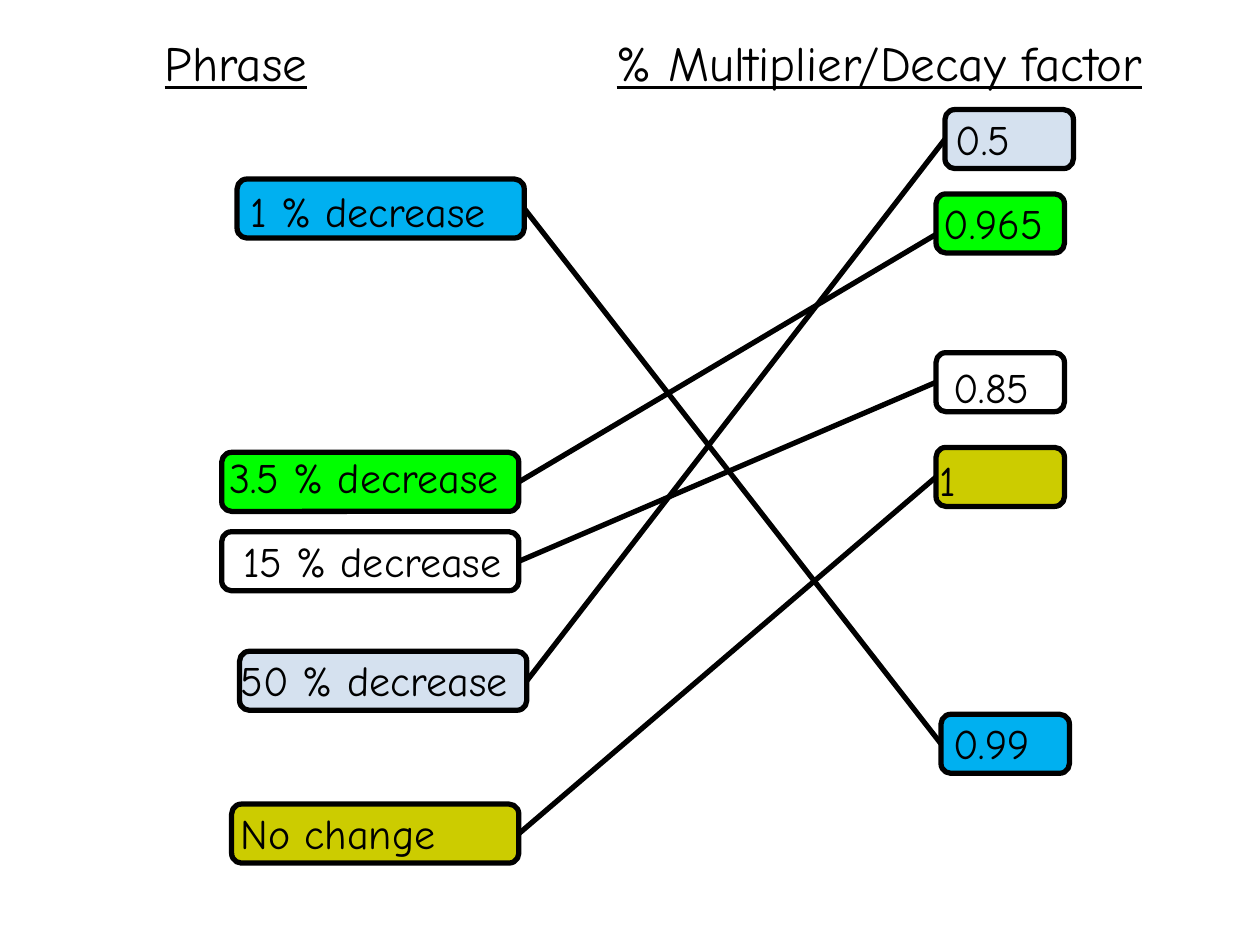
"""Build a matching exercise that links percentage decreases to their multipliers."""
from lxml.etree import SubElement
from pptx import Presentation
from pptx.dml.color import RGBColor
from pptx.enum.shapes import MSO_CONNECTOR, MSO_SHAPE
from pptx.enum.text import MSO_AUTO_SIZE
from pptx.oxml.ns import qn
from pptx.util import Cm, Pt

BLACK = RGBColor(0x00, 0x00, 0x00)
BLUE = RGBColor(0x00, 0xB0, 0xF0)
GREEN = RGBColor(0x00, 0xFF, 0x00)
PALE = RGBColor(0xD5, 0xE1, 0xEF)
OLIVE = RGBColor(0xCC, 0xCC, 0x00)

FONT = "Comic Neue"
BOX_HEIGHT = 1.19
FACTOR_WIDTH = 2.59
PHRASE_LABEL_WIDTH, FACTOR_LABEL_WIDTH, LABEL_HEIGHT = 7.01, 6.35, 1.3
FACTOR_COLUMN_TAB = 9.11

HEADINGS = ("Phrase", "\t", "% Multiplier/Decay factor")

# phrase and factor: text, (box left, top, width), (label left, top); then line drop
PAIRS = [
    (BLUE, ("1 % decrease", (4.78, 3.61, 5.79), (4.8, 3.61)),
     ("0.99", (18.97, 14.4, FACTOR_WIDTH), (18.97, 14.33)), 0),
    (GREEN, ("3.5 % decrease", (4.47, 9.12, 5.99), (4.37, 8.97)),
     ("0.965", (18.87, 3.91, FACTOR_WIDTH), (18.77, 3.86)), 0.22),
    (None, ("15 % decrease", (4.47, 10.72, 5.99), (4.65, 10.67)),
     ("0.85", (18.87, 7.11, FACTOR_WIDTH), (18.97, 7.16)), 0),
    (PALE, ("50 % decrease", (4.83, 13.13, 5.79), (4.6, 13.06)),
     ("0.5", (19.05, 2.21, FACTOR_WIDTH), (19.02, 2.16)), 0),
    (OLIVE, ("No change", (4.67, 16.21, 5.79), (4.6, 16.15)),
     ("1", (18.87, 9.02, FACTOR_WIDTH), (18.69, 9.04)), 0),
]


def add_label(slide, left, top, width, height):
    label = slide.shapes.add_textbox(Cm(left), Cm(top), Cm(width), Cm(height))
    label.text_frame.word_wrap = True
    label.text_frame.auto_size = MSO_AUTO_SIZE.SHAPE_TO_FIT_TEXT
    return label.text_frame


def style_run(run, size, underline=None):
    run.font.name = FONT
    run.font.size = Pt(size)
    run.font.color.rgb = BLACK
    run.font.underline = underline


def add_box(slide, colour, left, top, width):
    box = slide.shapes.add_shape(
        MSO_SHAPE.ROUNDED_RECTANGLE, Cm(left), Cm(top), Cm(width), Cm(BOX_HEIGHT))
    box.shadow.inherit = False
    if colour is None:
        box.fill.background()
    else:
        box.fill.solid()
        box.fill.fore_color.rgb = colour
    box.line.color.rgb = BLACK
    box.line.width = Pt(3)


def add_link(slide, phrase_box, factor_box, drop):
    left, top, width = phrase_box
    link = slide.shapes.add_connector(
        MSO_CONNECTOR.STRAIGHT,
        Cm(left + width), Cm(top + BOX_HEIGHT / 2),
        Cm(factor_box[0]), Cm(factor_box[1] + BOX_HEIGHT / 2 + drop))
    link.line.color.rgb = BLACK
    link.line.width = Pt(3)
    SubElement(link._element.spPr, qn("a:effectLst"))


def add_headings(slide):
    paragraph = add_label(slide, 3.07, 0.53, 22.33, 1.45).paragraphs[0]
    tabs = SubElement(paragraph._p.get_or_add_pPr(), qn("a:tabLst"))
    SubElement(tabs, qn("a:tab"), pos=str(Cm(FACTOR_COLUMN_TAB)), algn="l")
    for heading in HEADINGS:
        run = paragraph.add_run()
        run.text = heading
        style_run(run, 28, underline=heading != "\t")


def main():
    deck = Presentation()
    deck.slide_width, deck.slide_height = Cm(25.4), Cm(19.05)
    slide = deck.slides.add_slide(deck.slide_layouts[6])
    for colour, phrase, factor, drop in PAIRS:
        add_box(slide, colour, *phrase[1])
        add_box(slide, colour, *factor[1])
        add_link(slide, phrase[1], factor[1], drop)
        for (wording, _, corner), width in (
                (phrase, PHRASE_LABEL_WIDTH), (factor, FACTOR_LABEL_WIDTH)):
            label = add_label(slide, *corner, width, LABEL_HEIGHT)
            label.text = wording
            style_run(label.paragraphs[0].runs[0], 24)
    add_headings(slide)
    deck.save("out.pptx")


if __name__ == "__main__":
    main()
